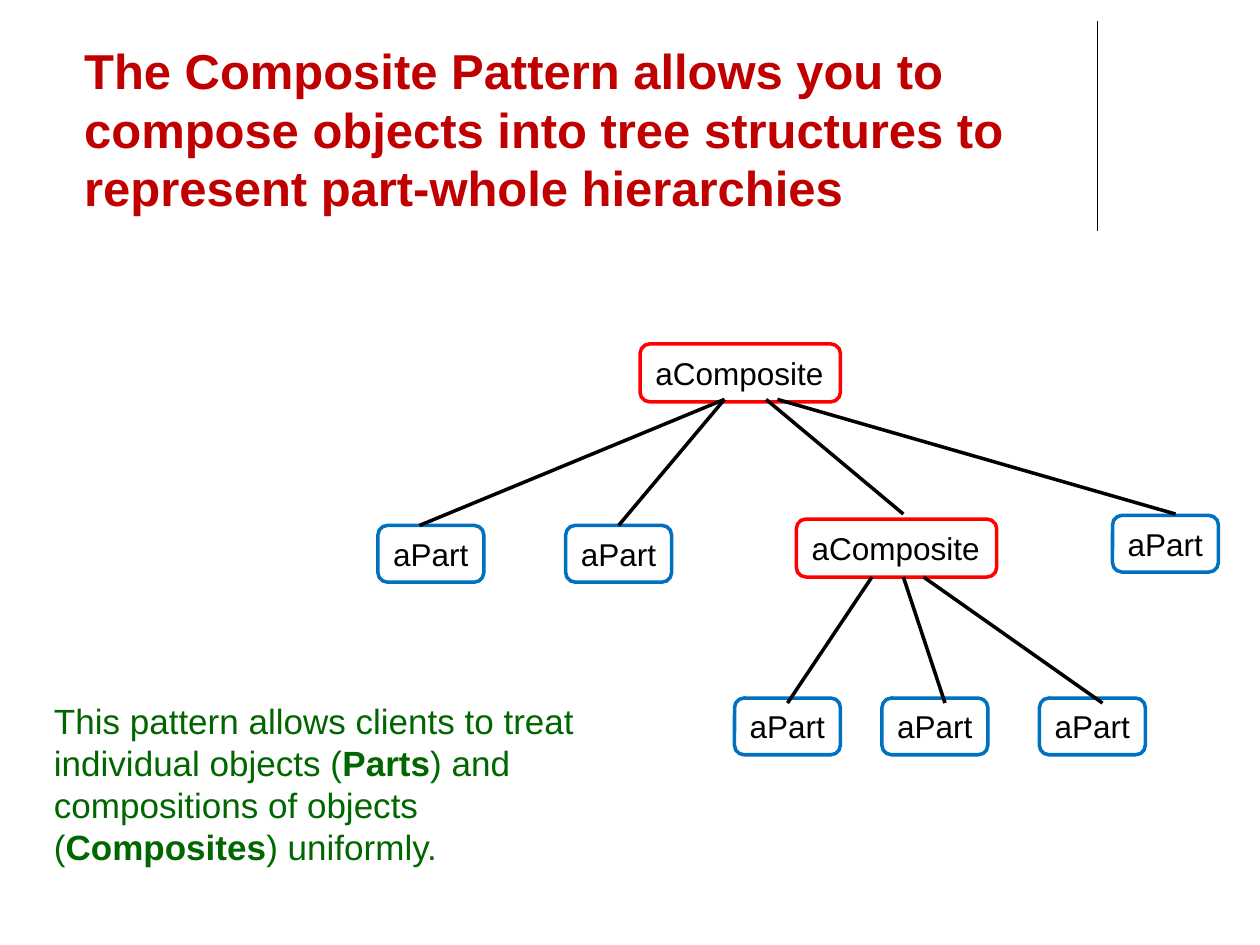
from lxml.etree import SubElement
from pptx import Presentation
from pptx.dml.color import RGBColor
from pptx.enum.shapes import MSO_CONNECTOR as Connector, MSO_SHAPE as Shape
from pptx.enum.text import MSO_ANCHOR as Anchor, MSO_AUTO_SIZE as AutoSize
from pptx.enum.text import PP_ALIGN as Align
from pptx.oxml.ns import qn
from pptx.util import Inches, Pt

BLACK = RGBColor(0x00, 0x00, 0x00)
CRIMSON = RGBColor(0xC0, 0x00, 0x00)
RED = RGBColor(0xFF, 0x00, 0x00)
BLUE = RGBColor(0x00, 0x70, 0xC0)
GREEN = RGBColor(0x00, 0x66, 0x00)


def add_text(para, text, size=18, color=BLACK, bold=False, font="Arial"):
    span = para.add_run()
    span.text = text
    span.font.name = font
    span.font.size = Pt(size)
    span.font.bold = bold
    span.font.color.rgb = color


class Painter:
    """Holds the line style and the current slide."""

    def __init__(self, page, line_width=2):
        self.page = page
        self.line_width = line_width

    def text_box(self, left, top, width, height, spans, anchor=Anchor.TOP, **style):
        box = self.page.shapes.add_textbox(
            Inches(left), Inches(top), Inches(width), Inches(height))
        frame = box.text_frame
        frame.word_wrap = True
        frame.vertical_anchor = anchor
        for text, bold in spans:
            add_text(frame.paragraphs[0], text, bold=bold, **style)

    def node(self, text, left, top, width, height, color):
        box = self.page.shapes.add_shape(
            Shape.ROUNDED_RECTANGLE,
            Inches(left), Inches(top), Inches(width), Inches(height))
        box.shadow.inherit = False
        box.fill.background()
        box.line.color.rgb = color
        box.line.width = Pt(self.line_width)
        frame = box.text_frame
        frame.word_wrap = False
        frame.auto_size = AutoSize.SHAPE_TO_FIT_TEXT
        frame.vertical_anchor = Anchor.MIDDLE
        para = frame.paragraphs[0]
        para.alignment = Align.LEFT
        add_text(para, text)
        return box

    def composite_node(self, left, top):
        return self.node("aComposite", left, top, 1.59, 0.46, RED)

    def leaf_node(self, left, top):
        return self.node("aPart", left, top, 0.84, 0.45, BLUE)

    def line(self, start, end, width=None):
        link = self.page.shapes.add_connector(
            Connector.STRAIGHT, *[Inches(value) for value in (*start, *end)])
        link.line.color.rgb = BLACK
        link.line.width = Pt(width or self.line_width)
        SubElement(link._element.spPr, qn("a:effectLst"))
        return link


def main():
    deck = Presentation()
    deck.slide_width, deck.slide_height = Inches(10), Inches(7.5)
    painter = Painter(deck.slides.add_slide(deck.slide_layouts[6]))

    # Title and the rule beside it
    painter.line((8.71, 0.17), (8.71, 1.83), width=0.75)
    title = ("The Composite Pattern allows you to compose objects into "
             "tree structures to represent part-whole hierarchies")
    painter.text_box(0.57, 0.24, 7.93, 1.53, [(title, True)],
                     anchor=Anchor.BOTTOM, size=28, color=CRIMSON)

    # Tree nodes
    painter.composite_node(5.08, 2.73)
    painter.composite_node(6.32, 4.12)
    second_leaf = painter.leaf_node(4.49, 4.17)
    for left, top in ((3, 4.17), (8.83, 4.09)):
        painter.leaf_node(left, top)
    for left in (5.83, 7, 8.25):
        painter.leaf_node(left, 5.54)

    # Branches from the root
    painter.line((5.75, 3.17), (3.33, 4.17))
    painter.line((5.75, 3.17), (4.92, 4.17)).end_connect(second_leaf, 0)
    painter.line((6.08, 3.17), (7.17, 4.08))
    painter.line((6.17, 3.17), (9.33, 4.08))

    # Branches from the inner composite
    for start, end in ((6.92, 6.25), (7.17, 7.5), (7.33, 8.75)):
        painter.line((start, 4.58), (end, 5.58))

    # Explanation
    painter.text_box(0.33, 5.5, 4.92, 1.75, [
        ("This pattern allows clients to treat individual objects (", False),
        ("Parts", True),
        (") and compositions of objects (", False),
        ("Composites", True),
        (") uniformly.", False),
    ], size=20, color=GREEN)

    deck.save("out.pptx")


if __name__ == "__main__":
    main()
